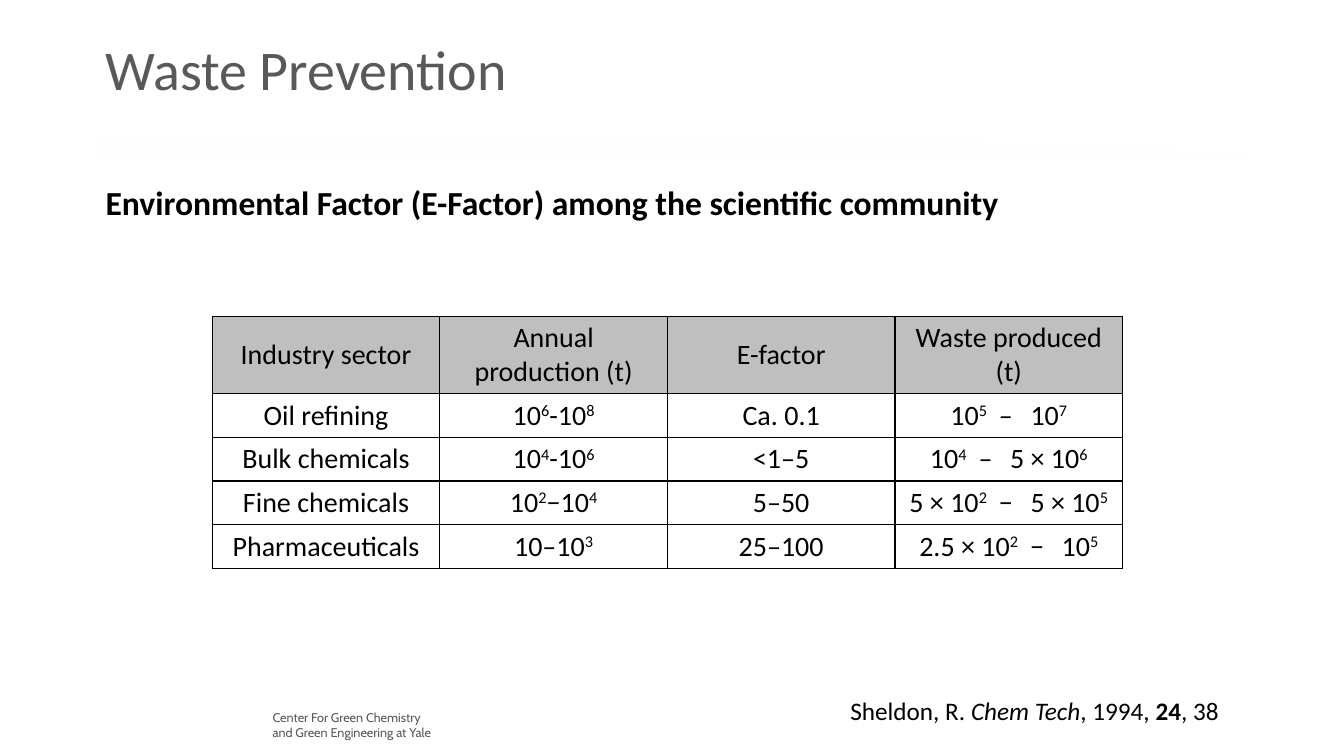
from dataclasses import dataclass

from lxml.etree import SubElement
from pptx import Presentation
from pptx.dml.color import RGBColor
from pptx.enum.shapes import MSO_CONNECTOR
from pptx.enum.text import MSO_ANCHOR, PP_ALIGN
from pptx.oxml.ns import qn
from pptx.util import Cm, Pt


@dataclass(frozen=True)
class Theme:
    font: str = "Calibri"
    footer_font: str = "Cabin"
    text: str = "000000"
    muted: str = "595959"
    header_fill: str = "BFBFBF"
    border: str = "000000"
    rules: tuple = ("4EB3CF", "44C1A3", "37A76F")
    rule_alpha: int = 3000
    title_size: int = 40
    subtitle_size: int = 24
    table_size: int = 20
    citation_size: int = 18
    footer_size: int = 9
    dash_spacing: int = 400


class SlideBuilder:
    def __init__(self, prs, theme):
        self.theme = theme
        self.slide = prs.slides.add_slide(prs.slide_layouts[6])

    def style(self, p, size, color=None, font=None, bold=False):
        for r in p.runs:
            r.font.name = font or self.theme.font
            r.font.size = Pt(size)
            r.font.bold = bold
            r.font.color.rgb = RGBColor.from_string(color or self.theme.text)

    def text(self, box, text, size, wrap=True, anchor=MSO_ANCHOR.TOP, **look):
        sp = self.slide.shapes.add_textbox(*map(Cm, box))
        tf = sp.text_frame
        tf.word_wrap = wrap
        tf.vertical_anchor = anchor
        tf.text = text
        for p in tf.paragraphs:
            self.style(p, size, **look)
        return tf

    def rule(self, x1, x2, y, color):
        """Draws a very faint horizontal line."""
        line = self.slide.shapes.add_connector(
            MSO_CONNECTOR.STRAIGHT, Cm(x1), Cm(y), Cm(x2), Cm(y))
        line.line.width = Pt(0.5)
        line.line.color.rgb = RGBColor.from_string(color)
        spPr = line._element.spPr
        clr = spPr.find(".//" + qn("a:srgbClr"))
        SubElement(clr, qn("a:alpha"), val=str(self.theme.rule_alpha))
        SubElement(spPr, qn("a:effectLst"))

    def citation(self, box, parts):
        """Each part is a text with "i" for italic, "b" for bold or nothing."""
        p = self.text(box, "", self.theme.citation_size, wrap=False).paragraphs[0]
        for part, _ in parts:
            p.add_run().text = part
        self.style(p, self.theme.citation_size)
        for r, (_, emphasis) in zip(p.runs, parts):
            r.font.italic = emphasis == "i"
            r.font.bold = emphasis == "b"

    def formula(self, p, text):
        """Carets enclose superscripts; a spaced dash gets wider gaps."""
        for i, part in enumerate(text.split("^")):
            spaced = part.startswith(" ")
            pieces = (part[:3], part[3:]) if spaced else (part,)
            for j, piece in enumerate(pieces):
                if not piece:
                    continue
                r = p.add_run()
                r.text = piece
                rPr = r._r.get_or_add_rPr()
                if i % 2:
                    rPr.set("baseline", "30000")
                if spaced and j == 0:
                    rPr.set("spc", str(self.theme.dash_spacing))
        p.alignment = PP_ALIGN.CENTER
        self.style(p, self.theme.table_size)

    def borders(self, cell):
        tcPr = cell._tc.get_or_add_tcPr()
        for i, side in enumerate(("lnL", "lnR", "lnT", "lnB")):
            ln = SubElement(tcPr, qn(f"a:{side}"), w=str(Pt(1)))
            tcPr.insert(i, ln)
            fill = SubElement(ln, qn("a:solidFill"))
            SubElement(fill, qn("a:srgbClr"), val=self.theme.border)

    def table(self, box, rows, header_height, row_height):
        frame = self.slide.shapes.add_table(len(rows), len(rows[0]), *map(Cm, box))
        table = frame.table
        for i, values in enumerate(rows):
            table.rows[i].height = Cm(row_height if i else header_height)
            for j, value in enumerate(values):
                cell = table.cell(i, j)
                cell.vertical_anchor = MSO_ANCHOR.MIDDLE
                cell.margin_left = cell.margin_right = Cm(0.24)
                cell.margin_top = cell.margin_bottom = Cm(0.11)
                if i:
                    cell.fill.background()
                else:
                    cell.fill.solid()
                    cell.fill.fore_color.rgb = RGBColor.from_string(self.theme.header_fill)
                self.borders(cell)
                self.formula(cell.text_frame.paragraphs[0], value)


SECTORS = [
    ("Industry sector", "Annual production (t)", "E-factor", "Waste produced (t)"),
    ("Oil refining", "10^6^-10^8", "Ca. 0.1", "10^5^ – 10^7"),
    ("Bulk chemicals", "10^4^-10^6", "<1–5", "10^4^ – 5 × 10^6"),
    ("Fine chemicals", "10^2^−10^4", "5–50", "5 × 10^2^ − 5 × 10^5"),
    ("Pharmaceuticals", "10–10^3", "25–100", "2.5 × 10^2^ − 10^5"),
]
RULE_SPANS = [(2.34, 24.82), (2.29, 29.74), (2.31, 31.55)]


def main():
    prs = Presentation()
    prs.slide_width, prs.slide_height = Cm(33.87), Cm(19.05)
    theme = Theme()
    s = SlideBuilder(prs, theme)

    s.text((6.62, 17.76, 4.72, 1.02),
           "Center For Green Chemistry\nand Green Engineering at Yale",
           theme.footer_size, color=theme.muted, font=theme.footer_font)
    for i, ((x1, x2), color) in enumerate(zip(RULE_SPANS, theme.rules)):
        s.rule(x1, x2, 3.58 + 0.18 * i, color)
    s.table((5.35, 7.97, 22.94, 6.35), SECTORS, header_height=1.95, row_height=1.1)
    s.text((2.41, 4.47, 23.24, 1.27),
           "Environmental Factor (E-Factor) among the scientific community",
           theme.subtitle_size, wrap=False, bold=True)
    title = s.text((2.41, 0.66, 11.43, 2.34), "Waste Prevention", theme.title_size,
                   anchor=MSO_ANCHOR.MIDDLE, color=theme.muted)
    title.paragraphs[0].line_spacing = 0.9
    s.citation((21.18, 17.4, 9.91, 1.02),
               [("Sheldon, R. ", ""), ("Chem Tech", "i"), (", 1994, ", ""),
                ("24", "b"), (", 38", "")])

    prs.save("out.pptx")


if __name__ == "__main__":
    main()
